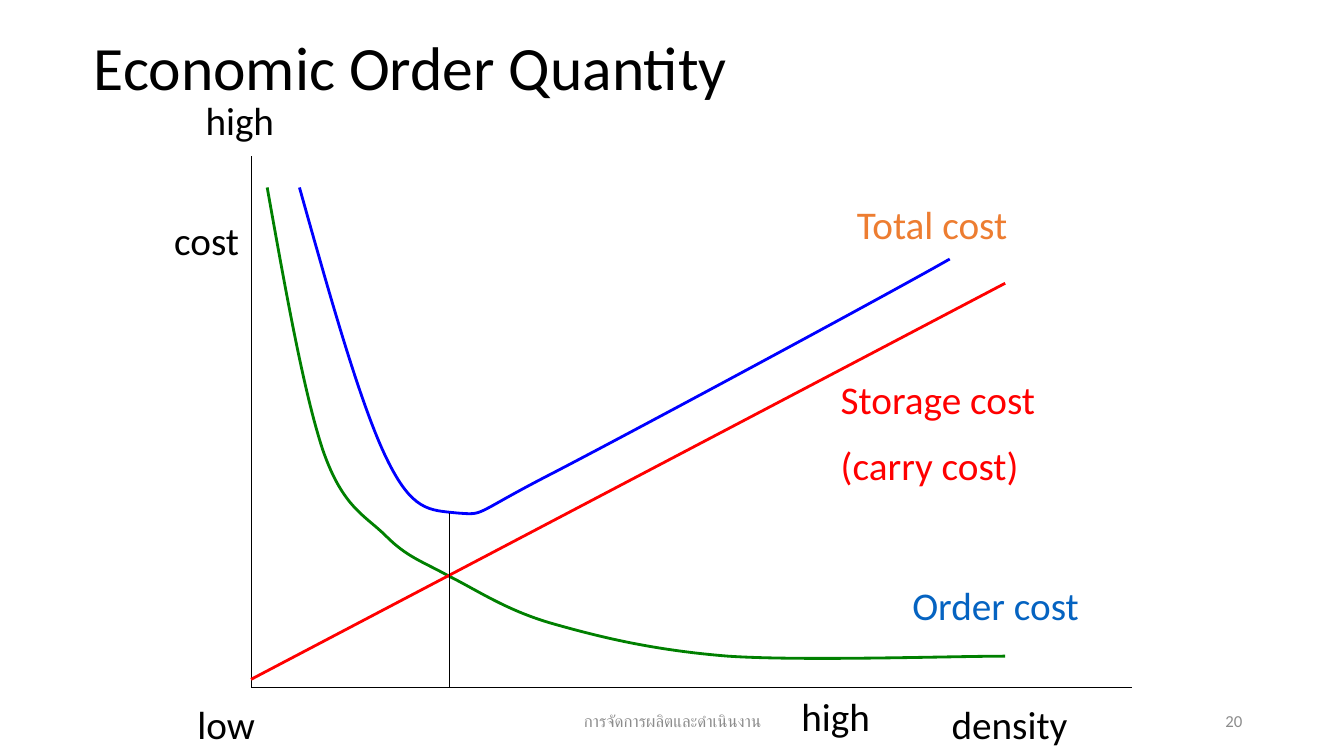
"""Build the Economic Order Quantity slide with its three cost curves."""
import lxml.etree
import pptx
import pptx.dml.color
import pptx.enum.shapes
import pptx.enum.text
import pptx.oxml.ns
import pptx.util

PX = 9144
BLACK, GREY, RED = "000000", "8C8C8C", "FF0000"
ALIGN = pptx.enum.text.PP_ALIGN
MIDDLE = pptx.enum.text.MSO_ANCHOR.MIDDLE
qn = pptx.oxml.ns.qn


def paint(color, tint):
    color.rgb = pptx.dml.color.RGBColor.from_string(tint)


def write(shape, box, text, size, tint, align=ALIGN.LEFT):
    shape.left, shape.top, shape.width, shape.height = [n * PX for n in box]
    frame = shape.text_frame
    frame.word_wrap = True
    frame.text = text
    for para in frame.paragraphs:
        para.alignment = align
        for run in para.runs:
            run.font.name = "Calibri"
            run.font.size = pptx.util.Pt(size)
            paint(run.font.color, tint)
    return frame


deck = pptx.Presentation()
deck.slide_width, deck.slide_height = 1333 * PX, 750 * PX
slide = deck.slides.add_slide(deck.slide_layouts[5])
shapes = slide.shapes

title = write(shapes.title, (83, -3, 1150, 145), "Economic Order Quantity", 44, BLACK)
title.vertical_anchor = MIDDLE
title.paragraphs[0].line_spacing = 0.9

footers = [
    ((442, 695, 450, 40), "การจัดการผลิตและดำเนินงาน", ALIGN.CENTER),
    ((942, 695, 300, 40), "20", ALIGN.RIGHT),
]
for box, text, align in footers:
    foot = write(shapes.add_textbox(0, 0, PX, PX), box, text, 12, GREY, align)
    foot.vertical_anchor = MIDDLE

curves = [
    ("008000", [
        (265, 186), (283, 287), (301, 388), (320, 446), (340, 504), (362, 511),
        (383, 532), (404, 553), (419, 557), (446, 572), (474, 586), (503, 606),
        (549, 619), (595, 632), (647, 645), (722, 651), (797, 656), (944, 651),
        (997, 651)]),
    ("0000FF", [
        (297, 186), (327, 293), (357, 400), (383, 454), (409, 508), (426, 506),
        (454, 509), (482, 511), (467, 511), (549, 469), (630, 427), (877, 294),
        (942, 257)]),
]
for tint, knots in curves:
    pen = shapes.build_freeform(*knots[0], scale=PX)
    pen.add_line_segments(knots[1:], close=False)
    curve = pen.convert_to_shape()
    sides = list(curve._element.iter(qn("a:lnTo")))
    for i in range(0, len(sides), 3):
        bend = lxml.etree.Element(qn("a:cubicBezTo"))
        sides[i].addprevious(bend)
        for side in sides[i:i + 3]:
            bend.append(side[0])
            side.getparent().remove(side)
    curve.shadow.inherit = False
    curve.fill.background()
    paint(curve.line.color, tint)
    curve.line.width = pptx.util.Pt(2)

lines = [
    ((249, 155, 249, 682), BLACK, 0.75),
    ((249, 682, 1123, 682), BLACK, 0.75),
    ((249, 674, 997, 281), RED, 2),
    ((446, 509, 446, 682), BLACK, 0.75),
]
for ends, tint, width in lines:
    line = shapes.add_connector(
        pptx.enum.shapes.MSO_CONNECTOR.STRAIGHT, *[n * PX for n in ends])
    paint(line.line.color, tint)
    line.line.width = pptx.util.Pt(width)
    lxml.etree.SubElement(line._element.spPr, qn("a:effectLst"))

labels = [
    ((163, 210, 94, 57), "cost", BLACK),
    ((934, 690, 150, 57), "density", BLACK),
    ((186, 690, 118, 57), "low", BLACK),
    ((194, 91, 110, 57), "high", BLACK),
    ((785, 682, 142, 57), "high", BLACK),
    ((824, 367, 291, 127), "Storage cost\n(carry cost)", RED),
    ((895, 572, 205, 57), "Order cost", "0563C1"),
    ((840, 194, 205, 57), "Total cost", "ED7D31"),
]
for box, text, tint in labels:
    label = write(shapes.add_textbox(0, 0, PX, PX), box, text, 28, tint)
    for para in label.paragraphs[1:]:
        para.space_before = pptx.util.Pt(14)

deck.save("out.pptx")
